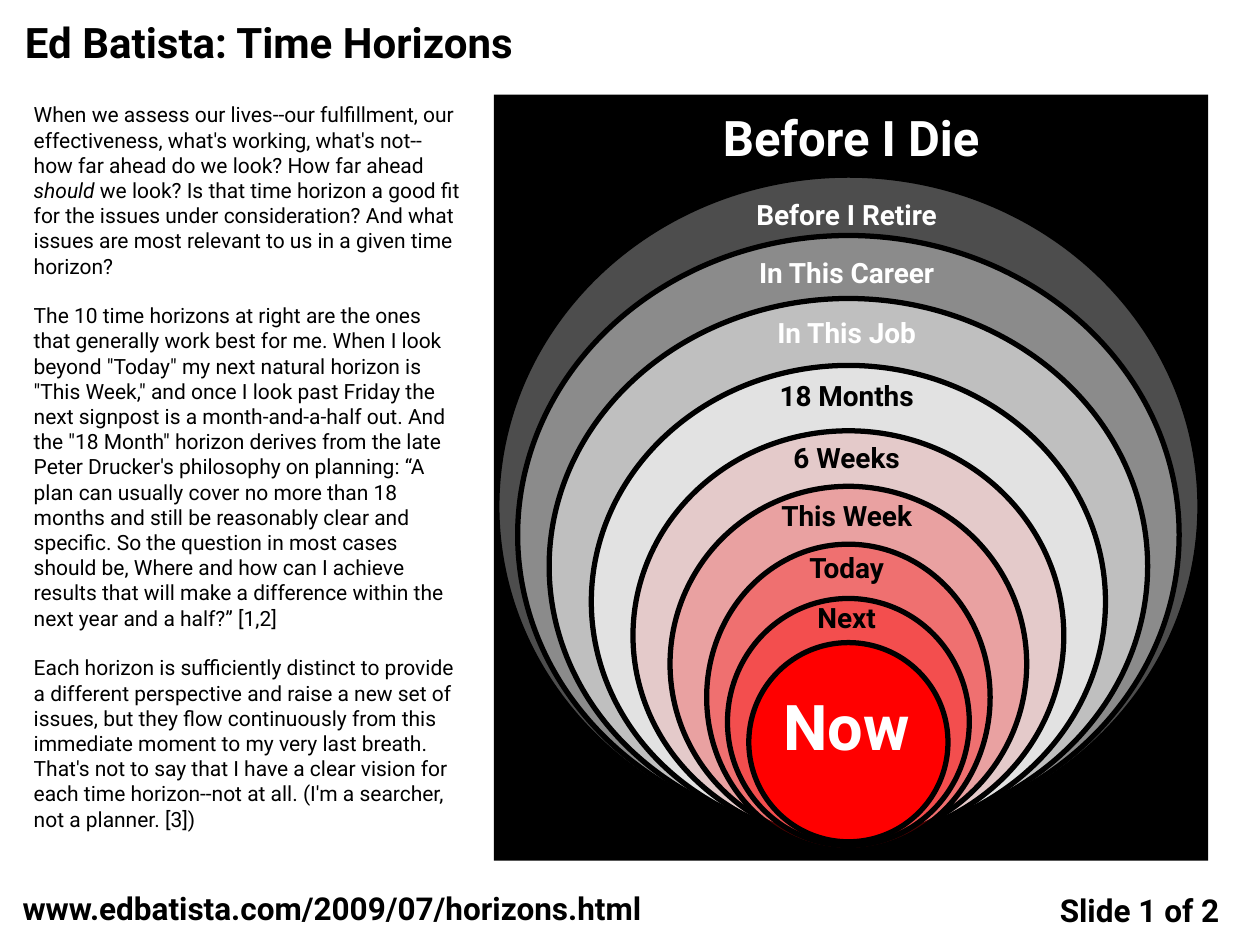
from lxml.etree import SubElement
from pptx import Presentation
from pptx.dml.color import RGBColor
from pptx.enum.shapes import MSO_SHAPE
from pptx.enum.text import MSO_AUTO_SIZE, PP_ALIGN
from pptx.oxml.ns import qn
from pptx.util import Pt

BLACK = RGBColor(0, 0, 0)
WHITE = RGBColor(255, 255, 255)
RED = RGBColor(255, 0, 0)
FACE = "Roboto"
LEFT, MID = PP_ALIGN.LEFT, PP_ALIGN.CENTER
LINE = 1.17  # line height of the font, per point of size

# Single-line texts: text, box, size, alignment, wrap
TITLE = ("Ed Batista: Time Horizons", (7.2, 5.8, 304.6, 36.7), 24, LEFT, False)
PAGE = ("Slide 1 of 2", (588.2, 505.4, 126, 28.8), 18, MID, True)
LINK = ("www.edbatista.com/2009/07/horizons.html",
        (5.8, 504.7, 414, 28.8), 18, LEFT, True)

# Body: paragraphs of (text, italic) runs
BODY_BOX = (12.2, 54.7, 257.8, 443.5)
BODY = [
    [("When we assess our lives--our fulfillment, our effectiveness, what's "
      "working, what's not--how far ahead do we look? How far ahead ", False),
     ("should", True),
     (" we look? Is that time horizon a good fit for the issues under "
      "consideration? And what issues are most relevant to us in a given time "
      "horizon?", False)],
    [("The 10 time horizons at right are the ones that generally work best for "
      "me. When I look beyond \"Today\" my next natural horizon is \"This "
      "Week,\" and once I look past Friday the next signpost is a "
      "month-and-a-half out. And the \"18 Month\" horizon derives from the late "
      "Peter Drucker's philosophy on planning: “A plan can usually cover no "
      "more than 18 months and still be reasonably clear and specific. So the "
      "question in most cases should be, Where and how can I achieve results "
      "that will make a difference within the next year and a half?” [1,2]",
      False)],
    [("Each horizon is sufficiently distinct to provide a different perspective "
      "and raise a new set of issues, but they flow continuously from this "
      "immediate moment to my very last breath. That's not to say that I have a "
      "clear vision for each time horizon--not at all. (I'm a searcher, not a "
      "planner. [3])", False)],
]

# Horizons, outermost first: top, width, height, fill, opacity in percent
PANEL = (282.2, 54, 408.2, 437.8)
AXIS = 484.8
RINGS = [
    (100.1, 401.8, 378.7, WHITE, 30),
    (134.6, 378, 342, WHITE, 35),
    (170.6, 342, 306, WHITE, 45),
    (208.8, 293.8, 270, WHITE, 55),
    (246.2, 246.2, 234, RED, 10),
    (277.9, 203.8, 203, RED, 20),
    (311, 162, 175, RED, 30),
    (342, 138.2, 141.1, RED, 30),
    (367.2, 113.8, 113.8, RED, 100),
]
OUTER = ("Before I Die", (384.5, 57.6, 203.8, 30.2), 28, MID, True)

# Ring labels: text, gap above in points of type, size, colour
LABEL_BOX = (310.3, 109.4, 347, 281.5)
LABELS = [
    ("Before I Retire", 0, 16, WHITE),
    ("In This Career", 12, 16, WHITE),
    ("In This Job", 13, 16, WHITE),
    ("18 Months", 14, 16, BLACK),
    ("6 Weeks", 14, 16, BLACK),
    ("This Week", 12, 16, BLACK),
    ("Today", 9, 16, BLACK),
    ("Next", 8, 16, BLACK),
    ("Now", 26, 36, WHITE),
]


def add_box(shapes, box, wrap=True):
    frame = shapes.add_textbox(*map(Pt, box)).text_frame
    frame.word_wrap = wrap
    frame.auto_size = MSO_AUTO_SIZE.NONE
    return frame


def add_par(frame, first, runs, gap, align, size, tint, bold):
    par = frame.paragraphs[0] if first else frame.add_paragraph()
    par.alignment = align
    if not first:
        par.space_before = Pt(round(gap * LINE, 1))
    for text, slant in runs:
        run = par.add_run()
        run.text = text
        style = {"name": FACE, "size": Pt(size), "bold": bold, "italic": slant}
        for key, value in style.items():
            setattr(run.font, key, value)
        run.font.color.rgb = tint


def add_line(shapes, item, tint):
    text, box, size, align, wrap = item
    add_par(add_box(shapes, box, wrap), True, [(text, False)], 0,
            align, size, tint, True)


def add_form(shapes, kind, box, tint, alpha=100):
    form = shapes.add_shape(kind, *map(Pt, box))
    form.shadow.inherit = False
    form.fill.solid()
    form.fill.fore_color.rgb = tint
    if alpha < 100:
        node = form.fill._xPr.find(".//" + qn("a:srgbClr"))
        SubElement(node, qn("a:alpha")).set("val", str(alpha * 1000))
    return form


def main():
    deck = Presentation()
    deck.slide_width, deck.slide_height = Pt(720), Pt(540)
    shapes = deck.slides.add_slide(deck.slide_layouts[6]).shapes

    # Title and page number
    add_line(shapes, TITLE, BLACK)
    add_line(shapes, PAGE, BLACK)

    # Nested horizons on the dark panel
    chart = shapes.add_group_shape().shapes
    panel = add_form(chart, MSO_SHAPE.RECTANGLE, PANEL, BLACK)
    panel.line.fill.background()
    for top, wide, high, tint, alpha in RINGS:
        ring = add_form(chart, MSO_SHAPE.OVAL,
                        (AXIS - wide / 2, top, wide, high), tint, alpha)
        ring.line.color.rgb = BLACK
        ring.line.width = Pt(3)

    # Horizon labels
    frame = add_box(chart, LABEL_BOX)
    for i, (text, gap, size, tint) in enumerate(LABELS):
        add_par(frame, i == 0, [(text, False)], gap, MID, size, tint, True)
    add_line(chart, OUTER, WHITE)

    # Web address and body text
    add_line(shapes, LINK, BLACK)
    frame = add_box(shapes, BODY_BOX)
    for i, runs in enumerate(BODY):
        add_par(frame, i == 0, runs, 12, LEFT, 12, BLACK, False)

    deck.save("out.pptx")


if __name__ == "__main__":
    main()
